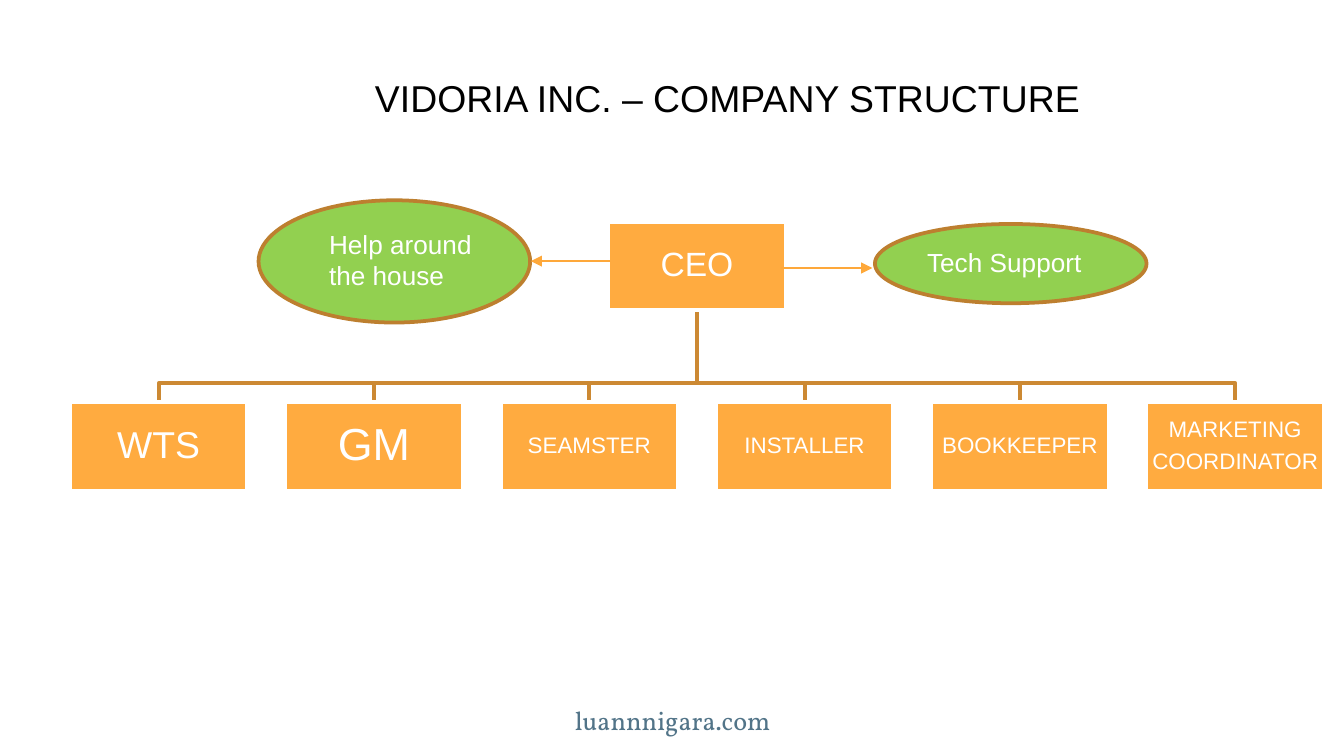
import pptx
import pptx.dml.color
import pptx.enum.shapes
import pptx.enum.text
import pptx.oxml
import pptx.oxml.ns
import pptx.util

Pt = pptx.util.Pt
SHAPES = pptx.enum.shapes.MSO_SHAPE
ALIGN = pptx.enum.text.PP_ALIGN
ANCHOR = pptx.enum.text.MSO_ANCHOR

BOX_WIDTH, BOX_HEIGHT = 95, 47.5
FIRST_LEFT, BOX_STEP = 37.5, 115.35
CEO_TOP, ROLE_TOP, BRANCH_Y = 118.8, 215.3, 205.3
ROLES = [
    ("WTS", 20),
    ("GM", 24),
    ("SEAMSTER", 12),
    ("INSTALLER", 12),
    ("BOOKKEEPER", 12),
    ("MARKETING\nCOORDINATOR", 12),
]


def color(hex_string):
    return pptx.dml.color.RGBColor.from_string(hex_string)


def write_text(shape, text, size, hex_color, font="Arial", align=ALIGN.LEFT):
    frame = shape.text_frame
    frame.text = text
    frame.word_wrap = True
    for paragraph in frame.paragraphs:
        paragraph.alignment = align
        for run in paragraph.runs:
            run.font.name = font
            run.font.size = Pt(size)
            run.font.color.rgb = color(hex_color)


def add_title(slide, text):
    title = slide.shapes.title
    title.left, title.top, title.width, title.height = Pt(193.7), Pt(36.7), Pt(399.6), Pt(65.5)
    write_text(title, text, 20, "000000")
    title.text_frame.vertical_anchor = ANCHOR.TOP
    title.text_frame.auto_size = pptx.enum.text.MSO_AUTO_SIZE.NONE


def add_label(slide, left, top, width, height, text, size, hex_color, **text_style):
    label = slide.shapes.add_textbox(Pt(left), Pt(top), Pt(width), Pt(height))
    write_text(label, text, size, hex_color, **text_style)
    return label


def add_filled_shape(slide, kind, left, top, width, height, fill, line):
    shape = slide.shapes.add_shape(kind, Pt(left), Pt(top), Pt(width), Pt(height))
    shape.shadow.inherit = False
    shape.fill.solid()
    shape.fill.fore_color.rgb = color(fill)
    shape.line.color.rgb = color(line)
    shape.line.width = Pt(2)
    return shape


def add_role_box(slide, left, top, text, size):
    box = add_filled_shape(slide, SHAPES.RECTANGLE, left, top, BOX_WIDTH, BOX_HEIGHT,
                           "FFAB40", "FFFFFF")
    write_text(box, text, size, "FFFFFF", align=ALIGN.CENTER)
    frame = box.text_frame
    frame.vertical_anchor = ANCHOR.MIDDLE
    frame.margin_left = frame.margin_right = frame.margin_top = frame.margin_bottom = Pt(1)
    for paragraph in frame.paragraphs:
        paragraph.line_spacing = 0.9
        paragraph.space_after = Pt(0.35 * size)


def add_branch(slide, start_x, end_x):
    """Draw the elbow line from the CEO box down to one role box."""
    builder = slide.shapes.build_freeform(Pt(start_x), Pt(CEO_TOP + BOX_HEIGHT))
    builder.add_line_segments(
        [(Pt(start_x), Pt(BRANCH_Y)), (Pt(end_x), Pt(BRANCH_Y)), (Pt(end_x), Pt(ROLE_TOP))],
        close=False,
    )
    branch = builder.convert_to_shape()
    branch.shadow.inherit = False
    branch.fill.background()
    branch.line.color.rgb = color("CC8933")
    branch.line.width = Pt(2)


def add_arrow(slide, start_x, end_x, y):
    arrow = slide.shapes.add_connector(
        pptx.enum.shapes.MSO_CONNECTOR.STRAIGHT, Pt(start_x), Pt(y), Pt(end_x), Pt(y))
    arrow.line.color.rgb = color("FEA83A")
    arrow.line.width = Pt(0.75)
    head = pptx.oxml.parse_xml(
        f'<a:tailEnd {pptx.oxml.ns.nsdecls("a")} type="triangle"/>')
    arrow.line._get_or_add_ln().append(head)
    effects = pptx.oxml.parse_xml(f'<a:effectLst {pptx.oxml.ns.nsdecls("a")}/>')
    arrow._element.spPr.append(effects)


def add_support_ellipse(slide, left, top, width, height):
    add_filled_shape(slide, SHAPES.OVAL, left, top, width, height, "92D050", "BD7F2F")


def main():
    presentation = pptx.Presentation()
    presentation.slide_width, presentation.slide_height = Pt(720), Pt(405)
    slide = presentation.slides.add_slide(presentation.slide_layouts[5])

    footer = add_label(slide, 185.8, 370, 349.2, 29.5, "luannnigara.com", 14, "527488",
                       font="Vollkorn", align=ALIGN.CENTER)
    footer.text_frame.margin_top = footer.text_frame.margin_bottom = Pt(7.2)

    role_lefts = [FIRST_LEFT + index * BOX_STEP for index in range(len(ROLES))]
    ceo_left = (role_lefts[0] + role_lefts[-1]) / 2
    for left in role_lefts:
        add_branch(slide, ceo_left + BOX_WIDTH / 2, left + BOX_WIDTH / 2)
    add_role_box(slide, ceo_left, CEO_TOP, "CEO", 18)
    for left, (text, size) in zip(role_lefts, ROLES):
        add_role_box(slide, left, ROLE_TOP, text, size)

    add_title(slide, "VIDORIA INC. – COMPANY STRUCTURE")

    add_support_ellipse(slide, 468.7, 120, 145.5, 42.5)
    add_support_ellipse(slide, 138.5, 107.3, 145.5, 65.5)
    add_label(slide, 489.6, 128.2, 103.7, 24.5, "Tech Support", 14, "FFFFFF")
    add_label(slide, 169.2, 118.8, 103.7, 41, "Help around the house", 14, "FFFFFF")
    add_arrow(slide, 326.9, 284.4, 139.9)
    add_arrow(slide, 418.3, 467.3, 143.6)

    presentation.save("out.pptx")


if __name__ == "__main__":
    main()
